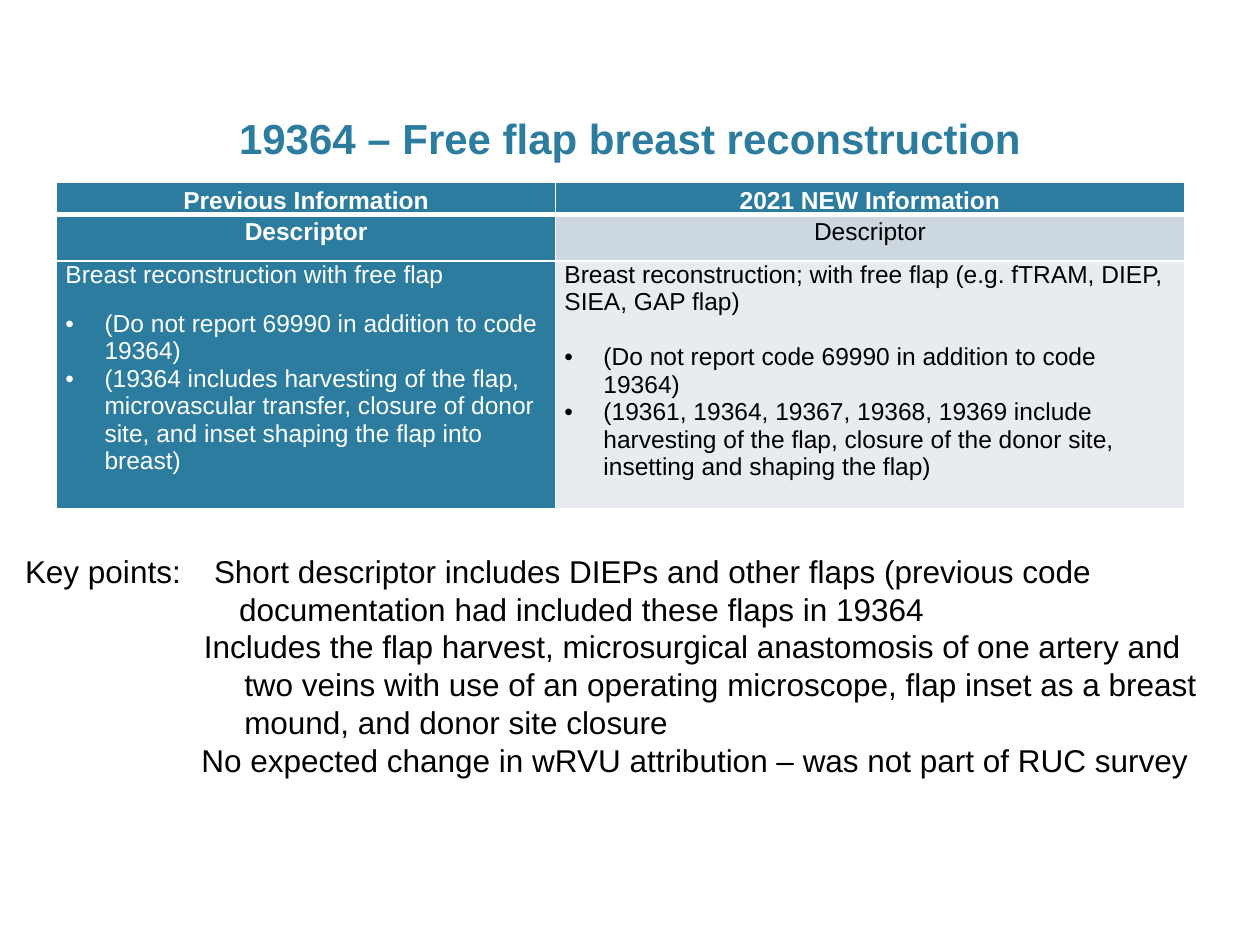
from lxml.etree import SubElement
from pptx import Presentation
from pptx.dml.color import RGBColor
from pptx.enum.text import MSO_ANCHOR, PP_ALIGN
from pptx.oxml.ns import qn
from pptx.util import Inches, Pt

TEAL = RGBColor(0x2C, 0x7C, 0x9F)
BLUE_GRAY = RGBColor(0xCD, 0xD7, 0xDF)
PALE_GRAY = RGBColor(0xE8, 0xEC, 0xF0)
WHITE = RGBColor(0xFF, 0xFF, 0xFF)
BLACK = RGBColor(0, 0, 0)

FONT = "Arial"
COLUMN_WIDTHS = (3.96, 4.99)
ROW_HEIGHTS = (0.25, 0.37, 1.97)

HEADERS = ("Previous Information", "2021 NEW Information")
PREVIOUS = (
    "Breast reconstruction with free flap",
    "(Do not report 69990 in addition to code 19364)",
    "(19364 includes harvesting of the flap, microvascular transfer, "
    "closure of donor site, and inset shaping the flap into breast)",
)
CURRENT = (
    "Breast reconstruction; with free flap (e.g. fTRAM, DIEP, SIEA, GAP flap)",
    "(Do not report code 69990 in addition to code 19364)",
    "(19361, 19364, 19367, 19368, 19369 include harvesting of the flap, "
    "closure of the donor site, insetting and shaping the flap)",
)
# Left indent in inches and text of each line
KEY_POINTS = (
    (0, "Key points:\tShort descriptor includes DIEPs and other flaps (previous code"),
    (1.7, "documentation had included these flaps in 19364"),
    (1.42, "Includes the flap harvest, microsurgical anastomosis of one artery and"),
    (1.74, "two veins with use of an operating microscope, flap inset as a breast"),
    (1.74, "mound, and donor site closure"),
    (1.4, "No expected change in wRVU attribution – was not part of RUC survey"),
)
KEY_TAB = 1.37


def write(paragraph, text, size=14, color=BLACK, bold=False,
          align=PP_ALIGN.LEFT, line_spacing=None, space_before=None):
    paragraph.alignment = align
    if line_spacing is not None:
        paragraph.line_spacing = line_spacing
    if space_before is not None:
        paragraph.space_before = Pt(space_before)
    run = paragraph.add_run()
    run.text = text
    run.font.name = FONT
    run.font.size = Pt(size)
    run.font.bold = bold
    run.font.color.rgb = color


def set_indent(paragraph, left, first=0):
    properties = paragraph._p.get_or_add_pPr()
    properties.set("marL", str(Inches(left)))
    properties.set("indent", str(Inches(first)))
    return properties


def add_bullet(paragraph):
    properties = set_indent(paragraph, 0.31, -0.31)
    SubElement(properties, qn("a:buFont"), typeface=FONT)
    SubElement(properties, qn("a:buChar"), char="•")


def add_tab(paragraph, position):
    tabs = SubElement(set_indent(paragraph, 0), qn("a:tabLst"))
    SubElement(tabs, qn("a:tab"), pos=str(Inches(position)), algn="l")


def style_cell(cell, fill, bottom_width=1):
    cell.margin_left = cell.margin_right = Inches(0.07)
    cell.margin_top = cell.margin_bottom = 0
    properties = cell._tc.get_or_add_tcPr()
    for side, width in (("L", 1), ("R", 1), ("T", 1), ("B", bottom_width)):
        line = SubElement(properties, qn("a:ln" + side), w=str(Pt(width)))
        color = SubElement(SubElement(line, qn("a:solidFill")), qn("a:srgbClr"))
        color.set("val", str(WHITE))
    cell.fill.solid()
    cell.fill.fore_color.rgb = fill


def fill_details(cell, lines, color, list_gap):
    paragraph = cell.text_frame.paragraphs[0]
    write(paragraph, lines[0], color=color)
    for index, text in enumerate(lines[1:]):
        paragraph = cell.text_frame.add_paragraph()
        add_bullet(paragraph)
        write(paragraph, text, color=color, space_before=0 if index else list_gap)


def add_title(slide, left, top, width, height):
    title = slide.shapes.title
    title.left, title.top, title.width, title.height = left, top, width, height
    title.text_frame.vertical_anchor = MSO_ANCHOR.BOTTOM
    write(title.text_frame.paragraphs[0], "19364 – Free flap breast reconstruction",
          size=24, color=TEAL, bold=True, align=PP_ALIGN.CENTER)


def add_comparison(slide, left, top):
    width, height = Inches(sum(COLUMN_WIDTHS)), Inches(sum(ROW_HEIGHTS))
    table = slide.shapes.add_table(3, 2, left, top, width, height).table
    for column, column_width in zip(table.columns, COLUMN_WIDTHS):
        column.width = Inches(column_width)
    for row, row_height in zip(table.rows, ROW_HEIGHTS):
        row.height = Inches(row_height)

    # Header row and descriptor row
    heading = {"align": PP_ALIGN.CENTER, "line_spacing": 1.15}
    for index, text in enumerate(HEADERS):
        cell = table.cell(0, index)
        style_cell(cell, TEAL, bottom_width=3)
        write(cell.text_frame.paragraphs[0], text, color=WHITE, bold=True, **heading)
    for index, (fill, color) in enumerate(((TEAL, WHITE), (BLUE_GRAY, BLACK))):
        cell = table.cell(1, index)
        style_cell(cell, fill)
        write(cell.text_frame.paragraphs[0], "Descriptor", color=color,
              bold=index == 0, **heading)

    # Descriptor details
    details = ((PREVIOUS, TEAL, WHITE, 12.3), (CURRENT, PALE_GRAY, BLACK, 15.6))
    for index, (lines, fill, color, list_gap) in enumerate(details):
        cell = table.cell(2, index)
        style_cell(cell, fill)
        fill_details(cell, lines, color, list_gap)


def add_key_points(slide, left, top, width, height):
    frame = slide.shapes.add_textbox(left, top, width, height).text_frame
    frame.word_wrap = True
    for index, (indent, text) in enumerate(KEY_POINTS):
        paragraph = frame.add_paragraph() if index else frame.paragraphs[0]
        if "\t" in text:
            add_tab(paragraph, KEY_TAB)
        else:
            set_indent(paragraph, indent)
        write(paragraph, text, size=18, line_spacing=Pt(21.6))


def main():
    presentation = Presentation()
    presentation.slide_width, presentation.slide_height = Inches(10), Inches(7.5)
    slide = presentation.slides.add_slide(presentation.slide_layouts[5])
    add_title(slide, Inches(0.6), Inches(0.33), Inches(8.8), Inches(1.01))
    add_comparison(slide, Inches(0.45), Inches(1.45))
    add_key_points(slide, Inches(0.1), Inches(4.33), Inches(9.79), Inches(1.92))
    presentation.save("out.pptx")


if __name__ == "__main__":
    main()
